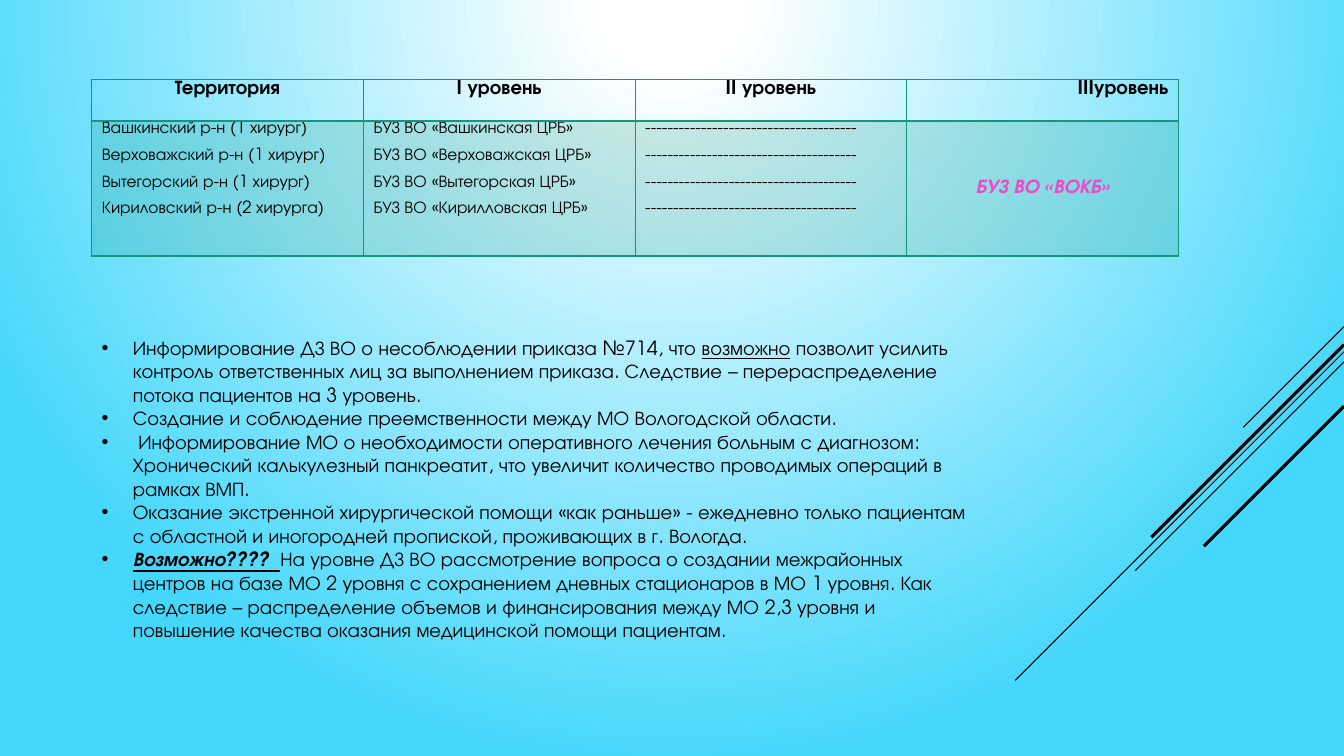
from lxml.etree import SubElement
from pptx import Presentation
from pptx.dml.color import RGBColor
from pptx.enum.shapes import MSO_CONNECTOR
from pptx.enum.text import MSO_ANCHOR, PP_ALIGN
from pptx.oxml.ns import qn
from pptx.util import Inches, Pt

COLORS = {
    "white": "FFFFFF",
    "sky": "45D7FB",
    "black": "000000",
    "green": "14967C",
    "pink": "EF48C9",
}
FONT = "TeX Gyre Adventor"

HEADERS = ["Территория", "I уровень", "II уровень", "IIIуровень"]
DISTRICTS = [
    "Вашкинский р-н (1 хирург)",
    "Верховажский р-н (1 хирург)",
    "Вытегорский р-н (1 хирург)",
    "Кириловский р-н (2 хирурга)",
]
HOSPITALS = [f"БУЗ ВО «{name} ЦРБ»" for name in
             ("Вашкинская", "Верховажская", "Вытегорская", "Кирилловская")]
DASHES = ["-" * 38] * len(DISTRICTS)
REGIONAL_HOSPITAL = ["БУЗ ВО «ВОКБ»"]

PROPOSALS = [
    [("Информирование ДЗ ВО о несоблюдении приказа №714, что ", ""),
     ("возможно", "u"),
     (" позволит усилить контроль ответственных лиц за выполнением приказа. "
      "Следствие – перераспределение потока пациентов на 3 уровень.", "")],
    [("Создание и соблюдение преемственности между МО Вологодской области.", "")],
    [(" Информирование МО о необходимости оперативного лечения больным с диагнозом: "
      "Хронический калькулезный панкреатит, что увеличит количество проводимых "
      "операций в рамках ВМП.", "")],
    [("Оказание экстренной хирургической помощи «как раньше» - ежедневно только "
      "пациентам с областной и иногородней пропиской, проживающих в г. Вологда.", "")],
    [("Возможно????  ", "biu"),
     ("На уровне ДЗ ВО рассмотрение вопроса о создании межрайонных центров на базе "
      "МО 2 уровня с сохранением дневных стационаров в МО 1 уровня. Как следствие – "
      "распределение объемов и финансирования между МО 2,3 уровня и повышение "
      "качества оказания медицинской помощи пациентам.", "")],
]


def rgb(name):
    return RGBColor.from_string(COLORS[name])


def style_run(run, size, color="black", marks=""):
    font = run.font
    font.name = FONT
    font.size = Pt(size)
    font.color.rgb = rgb(color)
    font.bold = "b" in marks
    font.italic = "i" in marks
    font.underline = "u" in marks


def paint_background(slide):
    fill = slide.background.fill
    fill.gradient()
    for stop, position, color in zip(fill.gradient_stops, (0.09, 1), ("white", "sky")):
        stop.position = position
        stop.color.rgb = rgb(color)
    gradient = slide.element.find(".//" + qn("a:gradFill"))
    gradient.remove(gradient.find(qn("a:lin")))
    circle = SubElement(gradient, qn("a:path"), path="circle")
    SubElement(circle, qn("a:fillToRect"), l="0", t="0", r="0", b="100000")


def add_diagonals(slide, right):
    for top, run, weight in [(3.24, 1, 0.75), (3.49, 3.26, 0.75), (3.59, 2.07, 0.75),
                             (3.42, 1.91, 2.25), (4.03, 1.39, 2.25)]:
        line = slide.shapes.add_connector(
            MSO_CONNECTOR.STRAIGHT, Inches(right), Inches(top),
            Inches(right - run), Inches(top + run))
        line.line.color.rgb = rgb("black")
        line.line.width = Pt(weight)
        SubElement(line.element.spPr, qn("a:effectLst"))


def set_borders(cell, bottom):
    properties = cell._tc.get_or_add_tcPr()
    for side, width in (("L", 1), ("R", 1), ("T", 1), ("B", bottom)):
        border = SubElement(properties, qn("a:ln" + side), w=str(Pt(width)))
        fill = SubElement(border, qn("a:solidFill"))
        SubElement(fill, qn("a:srgbClr"), val=COLORS["green"])


def fill_cell(cell, lines, size, align, color="black", marks="", space=0):
    cell.margin_top = cell.margin_bottom = 0
    cell.text_frame.text = "\n".join(lines)
    for paragraph in cell.text_frame.paragraphs:
        paragraph.alignment = align
        paragraph.space_after = Pt(space)
        for run in paragraph.runs:
            style_run(run, size, color, marks)


def add_levels_table(slide, left, top, width, header_height, body_height):
    shape = slide.shapes.add_table(2, len(HEADERS), Inches(left), Inches(top),
                                   Inches(width), Inches(header_height + body_height))
    table = shape.table
    table.first_row = table.horz_banding = False
    table.rows[0].height = Inches(header_height)
    table.rows[1].height = Inches(body_height)
    for index, header in enumerate(HEADERS):
        cell = table.cell(0, index)
        last = index == len(HEADERS) - 1
        fill_cell(cell, [header], 14, PP_ALIGN.RIGHT if last else PP_ALIGN.CENTER, marks="b")
        set_borders(cell, 2)
        cell.fill.background()
    for index, lines in enumerate([DISTRICTS, HOSPITALS, DASHES, REGIONAL_HOSPITAL]):
        cell = table.cell(1, index)
        if lines is REGIONAL_HOSPITAL:
            fill_cell(cell, lines, 14, PP_ALIGN.CENTER, "pink", "bi")
            cell.vertical_anchor = MSO_ANCHOR.MIDDLE
        else:
            fill_cell(cell, lines, 12, PP_ALIGN.LEFT, space=8)
        set_borders(cell, 1)
        cell.fill.solid()
        cell.fill.fore_color.rgb = rgb("green")
        tint = cell._tc.tcPr.find(qn("a:solidFill")).find(qn("a:srgbClr"))
        SubElement(tint, qn("a:alpha"), val="20000")


def add_proposals(slide, left, top, width, height):
    box = slide.shapes.add_textbox(Inches(left), Inches(top), Inches(width), Inches(height))
    frame = box.text_frame
    frame.word_wrap = True
    for index, parts in enumerate(PROPOSALS):
        paragraph = frame.add_paragraph() if index else frame.paragraphs[0]
        properties = paragraph._p.get_or_add_pPr()
        properties.set("marL", str(Inches(0.31)))
        properties.set("indent", str(-Inches(0.31)))
        SubElement(properties, qn("a:buFont"), typeface="Arial")
        SubElement(properties, qn("a:buChar"), char="•")
        for text, marks in parts:
            run = paragraph.add_run()
            run.text = text
            style_run(run, 14, marks=marks)


def main():
    presentation = Presentation()
    presentation.slide_width = Inches(13.33)
    presentation.slide_height = Inches(7.5)
    slide = presentation.slides.add_slide(presentation.slide_layouts[6])
    paint_background(slide)
    add_diagonals(slide, 13.33)
    add_levels_table(slide, 0.91, 0.79, 10.78, 0.41, 1.34)
    add_proposals(slide, 0.91, 3.28, 8.84, 3.77)
    presentation.save("out.pptx")


if __name__ == "__main__":
    main()
